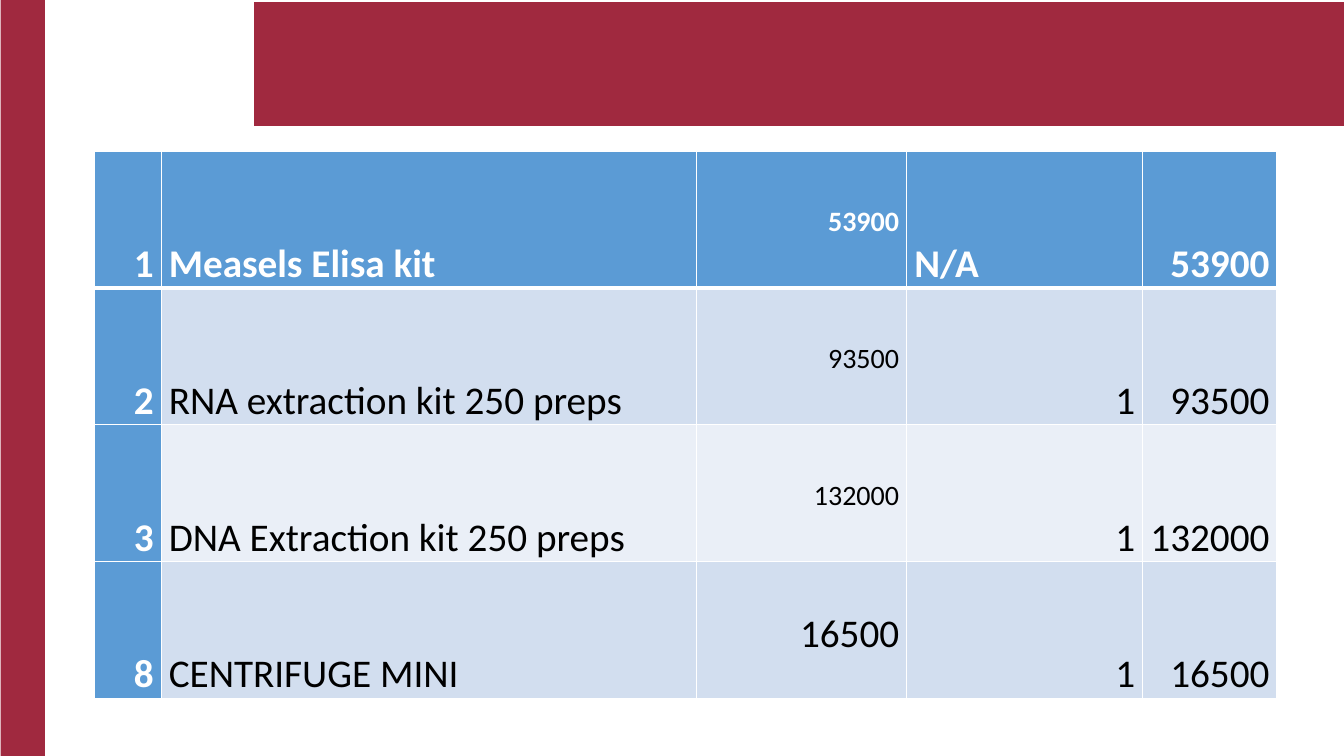
from lxml import etree
from pptx import Presentation
from pptx import util as u
from pptx.dml.color import RGBColor
from pptx.enum import shapes, text
from pptx.oxml.ns import qn

Pt = u.Pt
CRIMSON = RGBColor(0xA0, 0x29, 0x3F)
BLUE = RGBColor(0x5B, 0x9B, 0xD5)
BANDS = RGBColor(0xD2, 0xDE, 0xEF), RGBColor(0xEA, 0xEF, 0xF7)
WHITE = RGBColor(0xFF, 0xFF, 0xFF)
BLACK = RGBColor(0, 0, 0)

COL_WIDTHS = 47.5, 382.5, 150, 168.5, 96
ROW_HEIGHT = 97.75
PRICE_COL = 2
KITS = [
    ("1", "Measels Elisa kit", "53900", "N/A", "53900"),
    ("2", "RNA extraction kit 250 preps", "93500", "1", "93500"),
    ("3", "DNA Extraction kit 250 preps", "132000", "1", "132000"),
    ("8", "CENTRIFUGE MINI", "16500", "1", "16500"),
]


def add_bar(s, left, top, width, height):
    sp = s.shapes.add_shape(shapes.MSO_SHAPE.RECTANGLE,
                            Pt(left), Pt(top), Pt(width), Pt(height))
    sp.shadow.inherit = False
    sp.fill.solid()
    sp.fill.fore_color.rgb = CRIMSON
    sp.line.fill.background()


def set_borders(cell, **widths):
    tc_pr = cell._tc.get_or_add_tcPr()
    for side, width in widths.items():
        ln = etree.SubElement(tc_pr, qn("a:ln" + side), w=str(Pt(width)))
        fill = etree.SubElement(ln, qn("a:solidFill"))
        etree.SubElement(fill, qn("a:srgbClr"), val=str(WHITE))


def format_cell(cell, value, fill, strong, size, anchor):
    cell.margin_left = cell.margin_right = Pt(5.4)
    cell.margin_top = cell.margin_bottom = 0
    cell.vertical_anchor = anchor
    cell.fill.solid()
    cell.fill.fore_color.rgb = fill
    tf = cell.text_frame
    tf.text = value
    p = tf.paragraphs[0]
    p.line_spacing = 1.15
    p.alignment = text.PP_ALIGN.RIGHT if value.isdigit() else text.PP_ALIGN.LEFT
    font = p.runs[0].font
    font.name = "Calibri"
    font.size = Pt(size)
    font.bold = strong
    font.color.rgb = WHITE if strong else BLACK


def add_price_table(s, left, top):
    tbl = s.shapes.add_table(len(KITS), len(COL_WIDTHS), Pt(left), Pt(top),
                             Pt(sum(COL_WIDTHS)), Pt(ROW_HEIGHT * len(KITS))).table
    tbl.first_col = True
    for col, width in zip(tbl.columns, COL_WIDTHS):
        col.width = Pt(width)
    for i, kit in enumerate(KITS):
        tbl.rows[i].height = Pt(ROW_HEIGHT)
        for j, value in enumerate(kit):
            cell = tbl.cell(i, j)
            strong = i == 0 or j == 0
            is_price = j == PRICE_COL
            small = is_price and i < len(KITS) - 1
            set_borders(cell, L=1, R=1, T=3 if i == 1 else 1, B=3 if i == 0 else 1)
            format_cell(cell, value, BLUE if strong else BANDS[(i - 1) % 2], strong,
                        20 if small else 28,
                        text.MSO_ANCHOR.MIDDLE if is_price else text.MSO_ANCHOR.BOTTOM)


def main():
    """Build the kit price slide and save it."""
    prs = Presentation()
    prs.slide_width, prs.slide_height = Pt(960), Pt(540)
    s = prs.slides.add_slide(prs.slide_layouts[6])
    add_bar(s, 181.5, 1.5, 778.5, 88.5)
    add_bar(s, 0.5, 0, 31.5, 540)
    add_price_table(s, 67.75, 108)
    prs.save("out.pptx")


if __name__ == "__main__":
    main()
